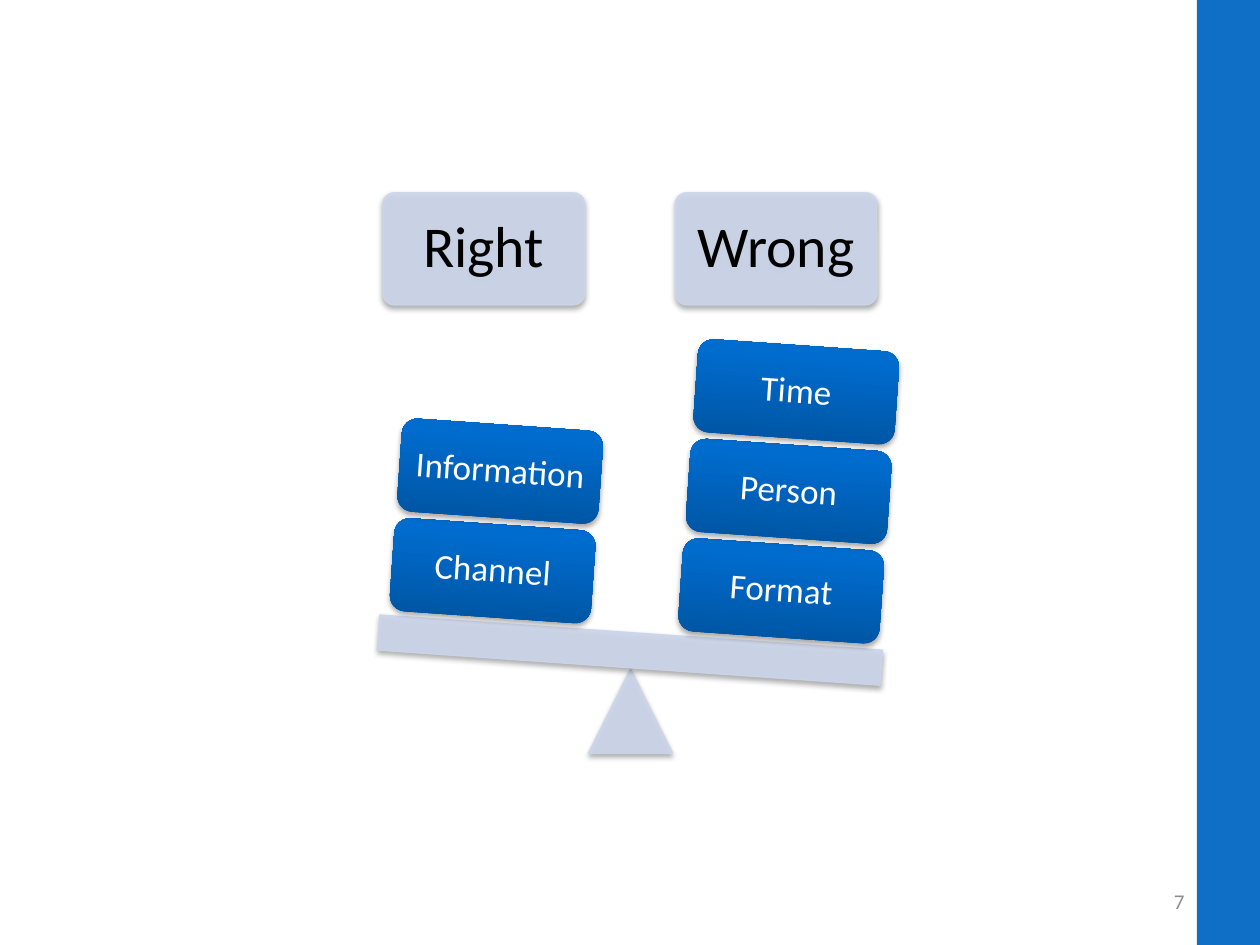
import pptx
import pptx.dml.color
import pptx.enum.shapes
import pptx.enum.text
import pptx.oxml
import pptx.oxml.ns
import pptx.util

Inches, Pt = pptx.util.Inches, pptx.util.Pt
SHAPE = pptx.enum.shapes.MSO_SHAPE
ALIGN = pptx.enum.text.PP_ALIGN

COLORS = {"bar": "0F6FC6", "pale": "CCD5EA", "number": "8C8C8C",
          "black": "000000", "white": "FFFFFF"}
GRADIENT = [(0, "00539F"), (80, "006CCE"), (100, "006DCF")]
TILT = 4

# heading, heading left, (left, top) of the lowest weight, weights upwards
PANS = [
    ("Right", 3.04, (3.11, 4.16), ["Channel", "Information"]),
    ("Wrong", 5.36, (5.4, 4.32), ["Format", "Person", "Time"]),
]
STEP = (0.06, -0.79)
BOX_W, HEAD_H, WEIGHT_H = 1.6, 0.89, 0.74


def rgb(name):
    return pptx.dml.color.RGBColor.from_string(COLORS[name])


def xml(text):
    """Parse an element, declaring its namespace before the first attribute."""
    return pptx.oxml.parse_xml(text.replace(
        " ", f" {pptx.oxml.ns.nsdecls('a')} ", 1))


def add_text(s, text, size, color, align=ALIGN.CENTER, wrap=False, inset=0.1,
             spacing=None):
    tf = s.text_frame
    tf.word_wrap = wrap
    tf.vertical_anchor = pptx.enum.text.MSO_ANCHOR.MIDDLE
    tf.margin_left = tf.margin_right = Inches(inset)
    p = tf.paragraphs[0]
    p.alignment = align
    if spacing:
        p.line_spacing = spacing
    r = p.add_run()
    r.text = text
    r.font.name, r.font.size = "Calibri", Pt(size)
    r.font.color.rgb = rgb(color)


def add_shape(kind, x, y, w, h, rotation=0):
    s = slide.shapes.add_shape(kind, Inches(x), Inches(y), Inches(w), Inches(h))
    s.rotation = rotation
    s.shadow.inherit = False
    return s


def add_shadow(s):
    s._element.spPr.find(pptx.oxml.ns.qn("a:effectLst")).append(xml(
        '<a:outerShdw blurRad="40000" dist="23000" dir="5400000" rotWithShape="0">'
        '<a:srgbClr val="000000"><a:alpha val="35000"/></a:srgbClr></a:outerShdw>'))


def add_pale(*place, **options):
    """Add a slightly transparent part of the scale."""
    s = add_shape(*place, **options)
    s.fill.solid()
    s.fill.fore_color.rgb = s.line.color.rgb = rgb("pale")
    s.line.width = Pt(0.75)
    for color in s._element.spPr.iter(pptx.oxml.ns.qn("a:srgbClr")):
        color.append(xml('<a:alpha val="90000"/>'))
    add_shadow(s)
    return s


def add_weight(text, x, y):
    s = add_shape(SHAPE.ROUNDED_RECTANGLE, x, y, BOX_W, WEIGHT_H, TILT)
    s.line.fill.background()
    s.fill.gradient()
    grad = s._element.spPr.find(pptx.oxml.ns.qn("a:gradFill"))
    stops = "".join(f'<a:gs pos="{pos * 1000}"><a:srgbClr val="{c}"/></a:gs>'
                    for pos, c in GRADIENT)
    grad.getparent().replace(grad, xml(
        f'<a:gradFill rotWithShape="1"><a:gsLst>{stops}</a:gsLst>'
        '<a:lin ang="16200000" scaled="0"/></a:gradFill>'))
    add_shadow(s)
    add_text(s, text, 20, "white", spacing=0.9)


prs = pptx.Presentation()
prs.slide_width, prs.slide_height = Inches(10), Inches(7.5)
slide = prs.slides.add_slide(prs.slide_layouts[6])

bar = add_shape(SHAPE.RECTANGLE, 9.5, 0, 0.5, 7.5)
bar.fill.solid()
bar.fill.fore_color.rgb = rgb("bar")
bar.line.fill.background()

number = slide.shapes.add_textbox(Inches(7.17), Inches(6.95), Inches(2.33), Inches(0.4))
add_text(number, "7", 12, "number", align=ALIGN.RIGHT, wrap=True)

for heading, left, _, _ in PANS:
    s = add_pale(SHAPE.ROUNDED_RECTANGLE, left, 1.53, BOX_W, HEAD_H)
    s.adjustments[0] = 0.1
    add_text(s, heading, 33, "black", inset=0.16, spacing=0.9)

add_pale(SHAPE.ISOSCELES_TRIANGLE, 4.67, 5.31, 0.67, 0.67)
add_pale(SHAPE.RECTANGLE, 3, 5.02, 4, 0.28, rotation=TILT)

for _, _, (x, y), weights in PANS:
    for i, text in enumerate(weights):
        add_weight(text, x + i * STEP[0], y + i * STEP[1])

prs.save("out.pptx")
